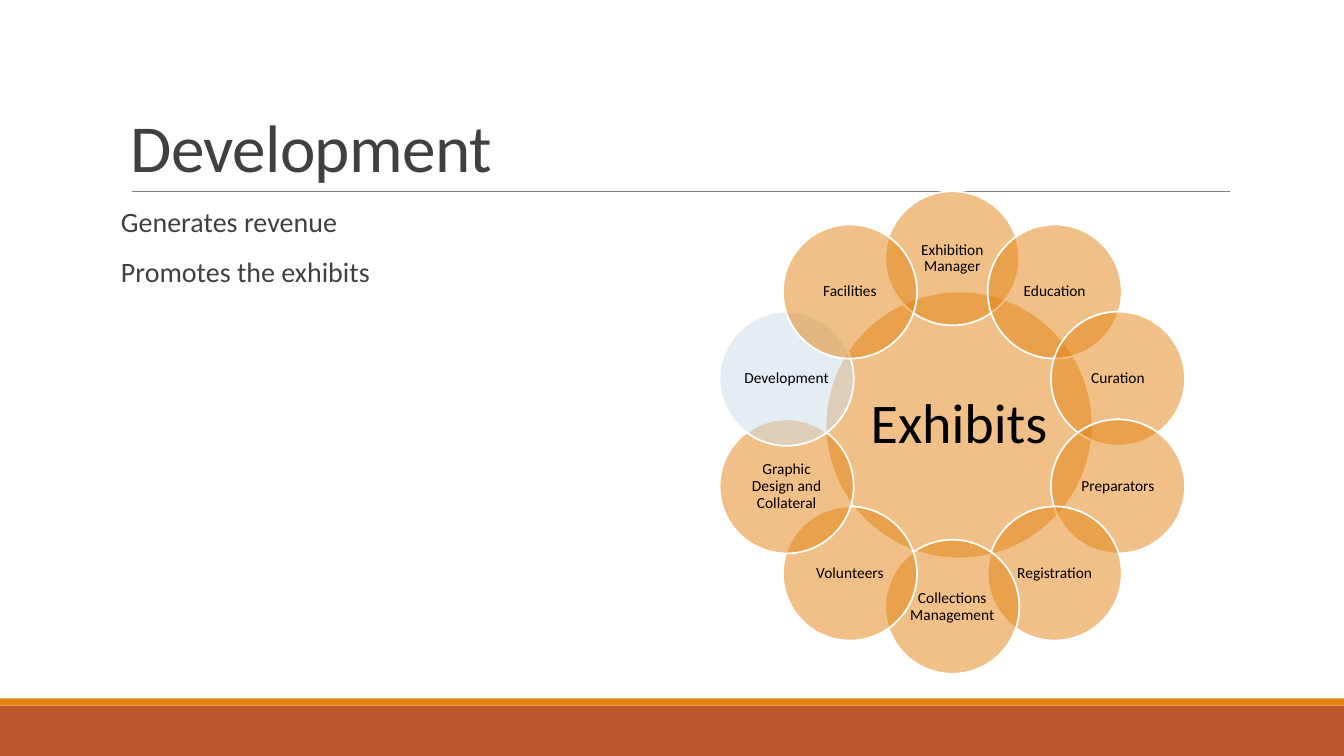
from math import cos, pi, sin

from lxml.etree import SubElement
from pptx import Presentation
from pptx.dml.color import RGBColor
from pptx.enum.shapes import MSO_CONNECTOR, MSO_SHAPE
from pptx.enum.text import MSO_ANCHOR, PP_ALIGN
from pptx.oxml.ns import qn
from pptx.util import Cm, Pt

COLORS = {
    "rust": "BD582C",
    "orange": "E48312",
    "pale": "CCDDEA",
    "rule": "808080",
    "text": "404040",
    "black": "000000",
    "white": "FFFFFF",
}


def add_text(para, text, size, color, spacing):
    run = para.add_run()
    run.text = text
    run.font.name = "Calibri"
    run.font.size = Pt(size)
    run.font.color.rgb = RGBColor.from_string(COLORS[color])
    para.line_spacing = spacing
    return run


def add_disc(x, y, width, color, label, size, inset):
    """Draw a labelled, half-transparent circle centred on x, y (cm)."""
    disc = slide.shapes.add_shape(
        MSO_SHAPE.OVAL, Cm(x - width / 2), Cm(y - width / 2), Cm(width), Cm(width))
    disc.shadow.inherit = False
    disc.fill.solid()
    disc.fill.fore_color.rgb = RGBColor.from_string(COLORS[color])
    tint = disc.fill._xPr.find(qn("a:solidFill"))[0]
    SubElement(tint, qn("a:alpha")).set("val", "50000")
    disc.line.color.rgb = RGBColor.from_string(COLORS["white"])
    disc.line.width = Pt(1.25)
    frame = disc.text_frame
    frame.word_wrap = True
    frame.vertical_anchor = MSO_ANCHOR.MIDDLE
    frame.margin_left = frame.margin_right = Cm(inset)
    frame.margin_top = frame.margin_bottom = Cm(inset)
    para = frame.paragraphs[0]
    para.alignment = PP_ALIGN.CENTER
    add_text(para, label, size, "black", 0.9)


deck = Presentation()
deck.slide_width, deck.slide_height = Cm(33.87), Cm(19.05)
slide = deck.slides.add_slide(deck.slide_layouts[6])

# Footer bands and title rule
for top, height, color in [(17.78, 1.27, "rust"), (17.6, 0.18, "orange")]:
    band = slide.shapes.add_shape(
        MSO_SHAPE.RECTANGLE, 0, Cm(top), deck.slide_width, Cm(height))
    band.shadow.inherit = False
    band.fill.solid()
    band.fill.fore_color.rgb = RGBColor.from_string(COLORS[color])
    band.line.fill.background()

rule = slide.shapes.add_connector(
    MSO_CONNECTOR.STRAIGHT, Cm(3.32), Cm(4.82), Cm(31), Cm(4.82))
rule.line.color.rgb = RGBColor.from_string(COLORS["rule"])
rule.line.width = Pt(0.5)
SubElement(rule._element.spPr, qn("a:effectLst"))

# Title
title = slide.shapes.add_textbox(Cm(3.05), Cm(0.79), Cm(27.94), Cm(4.03)).text_frame
title.word_wrap = True
title.vertical_anchor = MSO_ANCHOR.BOTTOM
run = add_text(title.paragraphs[0], "Development", 48, "text", 0.85)
run.font._element.set("spc", "-50")

# Body
body = slide.shapes.add_textbox(Cm(3.05), Cm(5.13), Cm(27.94), Cm(11.18)).text_frame
body.word_wrap = True
body.margin_left = body.margin_right = 0
for row, point in enumerate(["Generates revenue", "Promotes the exhibits"]):
    para = body.add_paragraph() if row else body.paragraphs[0]
    if row:
        para.space_before = Pt(12)
    para.space_after = Pt(2)
    add_text(para, point, 20, "text", 0.9)

# Hub and ring of teams, clockwise from the top
add_disc(24.17, 10.71, 6.73, "orange", "Exhibits", 40, 0.15)
teams = [
    "Exhibition Manager", "Education", "Curation", "Preparators", "Registration",
    "Collections Management", "Volunteers", "Graphic Design and Collateral",
    "Development", "Facilities",
]
for step, team in enumerate(teams):
    angle = 2 * pi * step / len(teams)
    color = "pale" if team == "Development" else "orange"
    add_disc(24 + 4.39 * sin(angle), 10.9 - 4.39 * cos(angle), 3.38,
             color, team, 11, 0.05)

deck.save("out.pptx")
